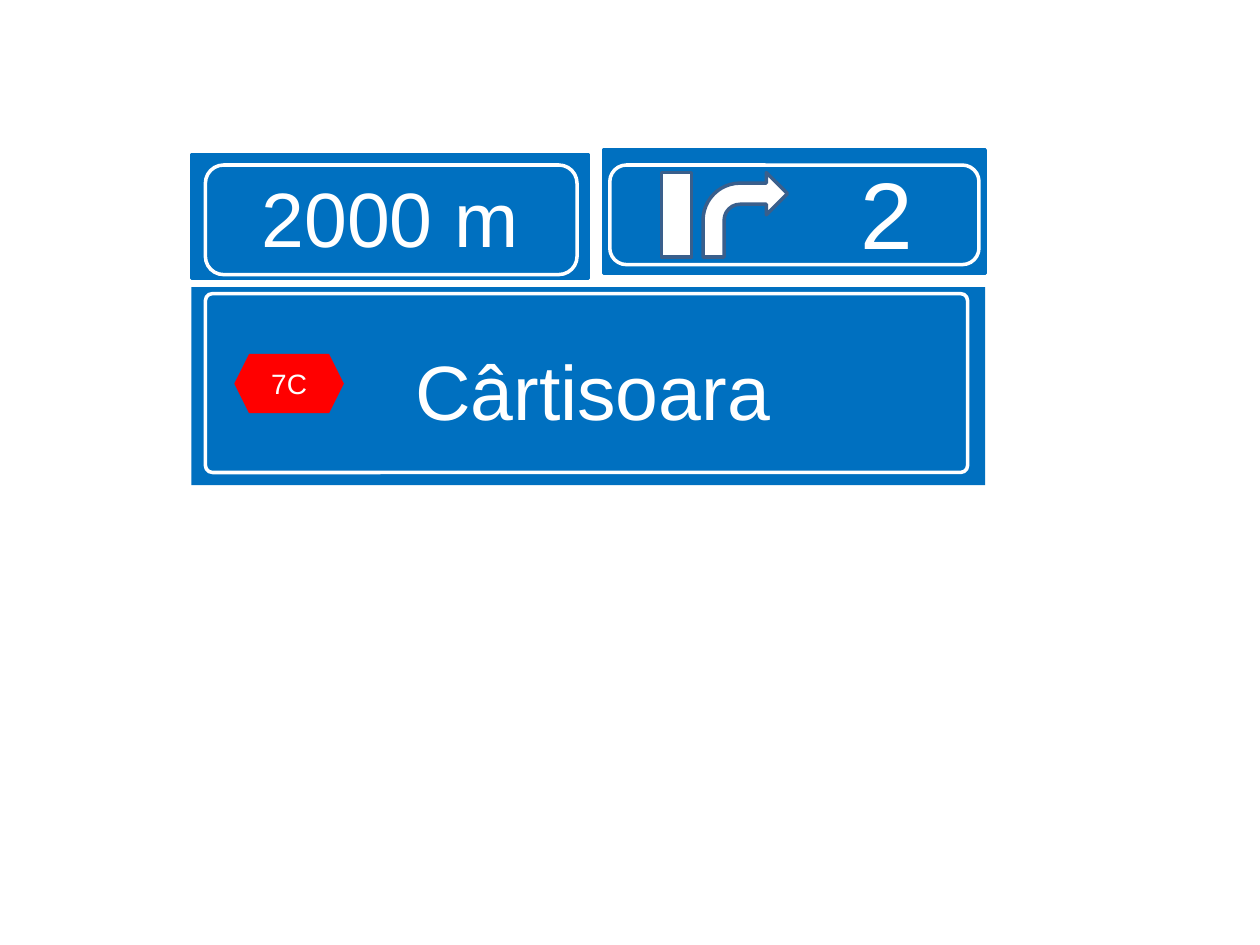
from dataclasses import dataclass
from pptx import Presentation
from pptx.dml.color import RGBColor
from pptx.enum.shapes import MSO_SHAPE
from pptx.enum.text import MSO_ANCHOR, PP_ALIGN
from pptx.util import Inches, Pt


@dataclass(frozen=True)
class Theme:
    blue: str = "0070C0"
    white: str = "FFFFFF"
    red: str = "FF0000"
    outline: str = "3A5F8C"
    font: str = "Arial"
    line: float = 2
    badge: int = 16
    label: int = 44
    exit_number: int = 54


theme = Theme()


def add_box(page, kind, place, fill=None, line=None, adjustments=()):
    box = page.shapes.add_shape(kind, *[Inches(length) for length in place])
    box.shadow.inherit = False
    for index, value in enumerate(adjustments):
        box.adjustments[index] = value
    if fill:
        box.fill.solid()
        box.fill.fore_color.rgb = RGBColor.from_string(fill)
    else:
        box.fill.background()
    if line:
        box.line.color.rgb = RGBColor.from_string(line)
        box.line.width = Pt(theme.line)
    else:
        box.line.fill.background()
    return box


def write(box, text, size, insets=(0.1, 0.05, 0.1, 0.05), anchor=MSO_ANCHOR.MIDDLE):
    frame = box.text_frame
    frame.word_wrap = True
    frame.vertical_anchor = anchor
    frame.margin_left, frame.margin_top, frame.margin_right, frame.margin_bottom = [
        Inches(inset) for inset in insets
    ]
    para = frame.paragraphs[0]
    para.text = text
    para.alignment = PP_ALIGN.CENTER
    para.font.name = theme.font
    para.font.size = Pt(size)
    para.font.color.rgb = RGBColor.from_string(theme.white)


deck = Presentation()
deck.slide_width, deck.slide_height = Inches(10), Inches(7.5)
page = deck.slides.add_slide(deck.slide_layouts[6])

rounded = MSO_SHAPE.ROUNDED_RECTANGLE

destination = add_box(page, MSO_SHAPE.RECTANGLE, (1.52, 2.28, 6.3, 1.57), theme.blue)
write(destination, " Cârtisoara", theme.label, (0, 0.45, 0.1, 0.24), MSO_ANCHOR.TOP)
add_box(page, rounded, (1.63, 2.33, 6.05, 1.42), line=theme.white, adjustments=[0.04])

exit_panel = add_box(page, rounded, (4.79, 1.19, 3.03, 0.98), theme.blue, theme.blue, [0])
write(exit_panel, "2", theme.exit_number, (1.57, 0.05, 0.1, 0.05))
add_box(page, MSO_SHAPE.RECTANGLE, (5.25, 1.37, 0.24, 0.67), theme.white, theme.outline)
add_box(page, MSO_SHAPE.BENT_ARROW, (5.58, 1.37, 0.67, 0.67), theme.white, theme.outline,
        [0.25, 0.25, 0.25, 0.44])
add_box(page, rounded, (4.84, 1.31, 2.93, 0.79), line=theme.white)

distance = add_box(page, rounded, (1.52, 1.23, 3.15, 0.98), theme.blue, theme.blue, [0])
write(distance, "2000 m", theme.label)
add_box(page, rounded, (1.63, 1.31, 2.95, 0.87), line=theme.white)

road_badge = add_box(page, MSO_SHAPE.HEXAGON, (1.86, 2.81, 0.87, 0.47), theme.red)
write(road_badge, "7C", theme.badge)

deck.save("out.pptx")
